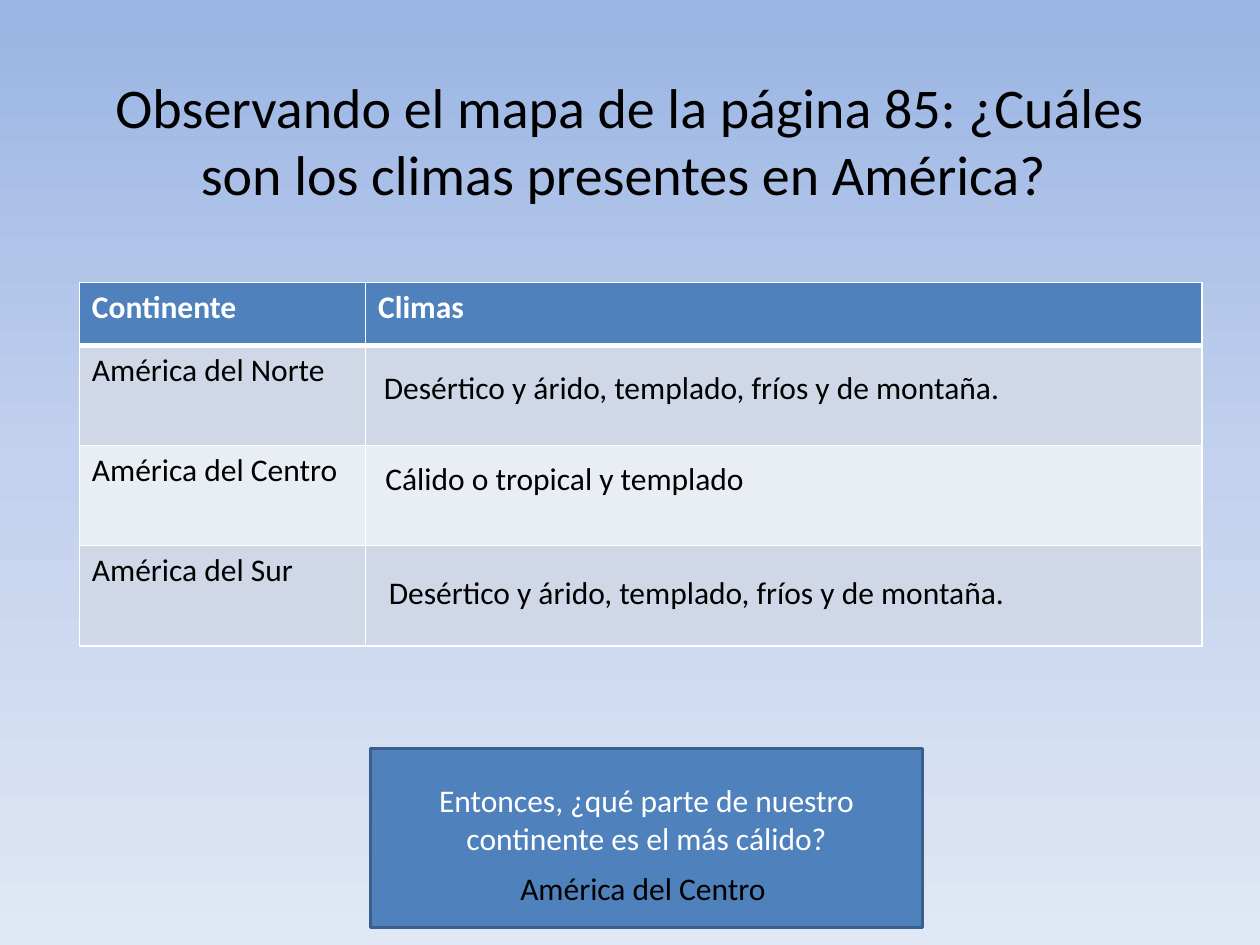
from copy import deepcopy
from dataclasses import dataclass

from pptx import Presentation
from pptx.dml.color import RGBColor
from pptx.enum.shapes import MSO_SHAPE
from pptx.enum.text import MSO_ANCHOR, PP_ALIGN
from pptx.oxml.ns import qn
from pptx.util import Cm, Pt
from lxml import etree

RECT = MSO_SHAPE.RECTANGLE
LEFT, CENTER = PP_ALIGN.LEFT, PP_ALIGN.CENTER
TOP, MIDDLE = MSO_ANCHOR.TOP, MSO_ANCHOR.MIDDLE

BLACK = RGBColor(0x00, 0x00, 0x00)
WHITE = RGBColor(0xFF, 0xFF, 0xFF)
BLUE = RGBColor(0x4F, 0x81, 0xBD)
DARK_BLUE = RGBColor(0x3A, 0x5F, 0x8C)
BAND_DARK = RGBColor(0xD0, 0xD8, 0xE8)
BAND_LIGHT = RGBColor(0xE9, 0xED, 0xF4)
SKY = (
    (0, RGBColor(0x9A, 0xB5, 0xE4)),
    (0.5, RGBColor(0xC2, 0xD1, 0xED)),
    (1, RGBColor(0xE1, 0xE8, 0xF5)),
)

FONT = "Calibri"
COLUMN_WIDTHS = (5.77, 16.86)
HEADER_HEIGHT, ROW_HEIGHT = 1.27, 2.02
ROWS = (
    ("Continente", "Climas"),
    ("América del Norte", ""),
    ("América del Centro", ""),
    ("América del Sur", ""),
)


@dataclass
class Label:
    text: str
    left: float
    top: float
    width: float
    height: float = 1.02
    size: int = 18
    align: PP_ALIGN = LEFT
    anchor: MSO_ANCHOR = TOP


LABELS = (
    Label("Observando el mapa de la página 85: ¿Cuáles son los climas presentes en América? ",
          1.27, 0.91, 22.86, 3.81, 32, CENTER, MIDDLE),
    Label("Desértico y árido, templado, fríos y de montaña.", 7.49, 7.29, 16.26),
    Label("Cálido o tropical y templado", 7.52, 9.12, 11.4),
    Label("Desértico y árido, templado, fríos y de montaña.", 7.59, 11.43, 13.59),
    Label("América del Centro ", 8.64, 17.4, 8.79, align=CENTER),
)


def write(tf, text: str, color: RGBColor, size: int = 18,
          align: PP_ALIGN = LEFT, bold: bool = False) -> None:
    p = tf.paragraphs[0]
    p.text = text
    p.alignment = align
    p.font.name = FONT
    p.font.size = Pt(size)
    p.font.bold = bold
    p.font.color.rgb = color


def paint_background(s) -> None:
    fill = s.background.fill
    fill.gradient()
    fill.gradient_angle = 270
    stops = s._element.find(".//" + qn("a:gsLst"))
    stops.insert(1, deepcopy(stops[0]))
    for stop, (position, color) in zip(fill.gradient_stops, SKY):
        stop.position = position
        stop.color.rgb = color


def add_label(s, label: Label) -> None:
    sp = s.shapes.add_textbox(Cm(label.left), Cm(label.top), Cm(label.width), Cm(label.height))
    tf = sp.text_frame
    tf.word_wrap = True
    tf.vertical_anchor = label.anchor
    write(tf, label.text, BLACK, label.size, label.align)


def set_borders(cell, top: int, bottom: int) -> None:
    tc_pr = cell._tc.get_or_add_tcPr()
    for side, width in (("L", 1), ("R", 1), ("T", top), ("B", bottom)):
        ln = etree.SubElement(tc_pr, qn(f"a:ln{side}"), w=str(Pt(width)))
        fill = etree.SubElement(ln, qn("a:solidFill"))
        etree.SubElement(fill, qn("a:srgbClr"), val=str(WHITE))


def add_climate_table(s) -> None:
    height = HEADER_HEIGHT + ROW_HEIGHT * (len(ROWS) - 1)
    frame = s.shapes.add_table(len(ROWS), len(COLUMN_WIDTHS), Cm(1.6), Cm(5.69),
                               Cm(sum(COLUMN_WIDTHS)), Cm(height))
    table = frame.table
    for column, width in zip(table.columns, COLUMN_WIDTHS):
        column.width = Cm(width)
    for i, texts in enumerate(ROWS):
        header = i == 0
        table.rows[i].height = Cm(HEADER_HEIGHT if header else ROW_HEIGHT)
        band = BLUE if header else BAND_DARK if i % 2 else BAND_LIGHT
        for j, text in enumerate(texts):
            cell = table.cell(i, j)
            set_borders(cell, 3 if i == 1 else 1, 3 if header else 1)
            cell.fill.solid()
            cell.fill.fore_color.rgb = band
            write(cell.text_frame, text, WHITE if header else BLACK, bold=header)


def add_question(s) -> None:
    sp = s.shapes.add_shape(RECT, Cm(7.47), Cm(15.09), Cm(11.13), Cm(3.61))
    sp.shadow.inherit = False
    sp.fill.solid()
    sp.fill.fore_color.rgb = BLUE
    sp.line.color.rgb = DARK_BLUE
    sp.line.width = Pt(2)
    tf = sp.text_frame
    tf.word_wrap = True
    tf.vertical_anchor = MIDDLE
    tf.margin_bottom = Cm(0.9)
    write(tf, "Entonces, ¿qué parte de nuestro continente es el más cálido?", WHITE, align=CENTER)


def main() -> None:
    prs = Presentation()
    prs.slide_width, prs.slide_height = Cm(25.4), Cm(19.05)
    s = prs.slides.add_slide(prs.slide_layouts[6])
    paint_background(s)
    add_climate_table(s)
    add_question(s)
    for label in LABELS:
        add_label(s, label)
    prs.save("out.pptx")


if __name__ == "__main__":
    main()
